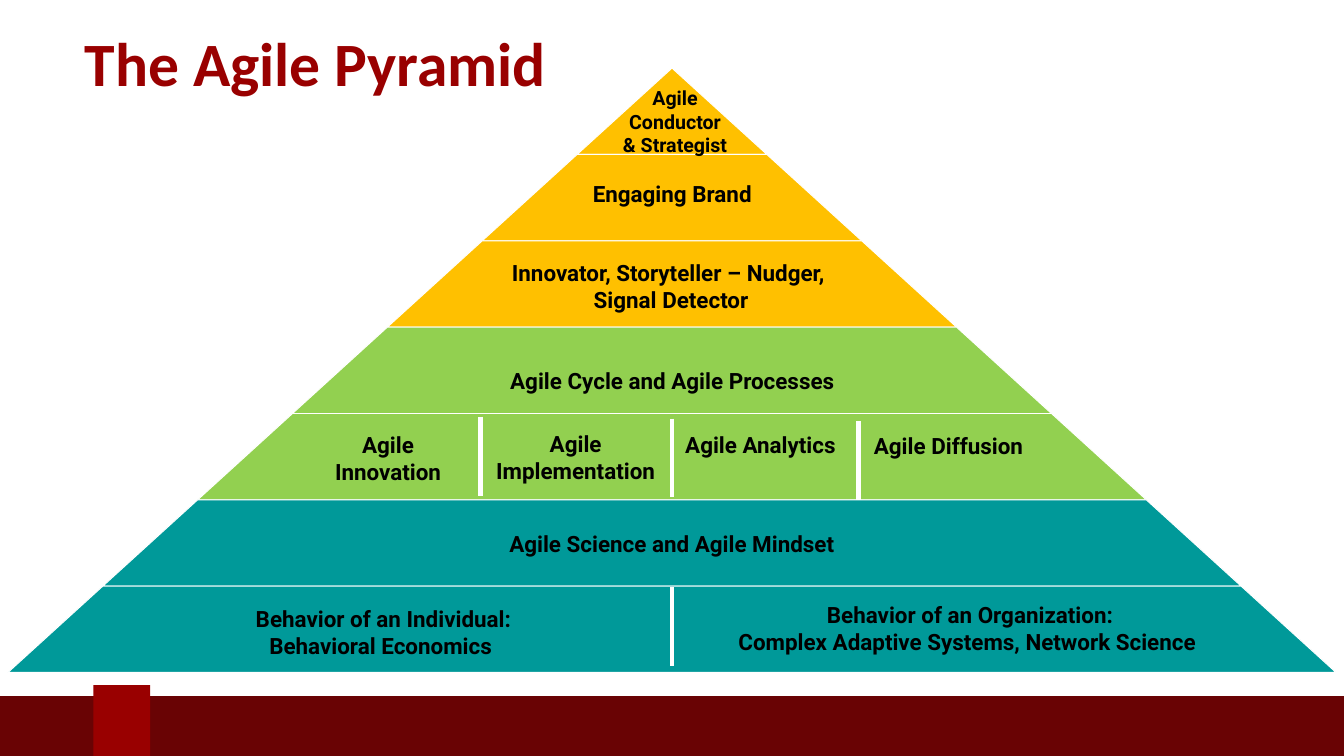
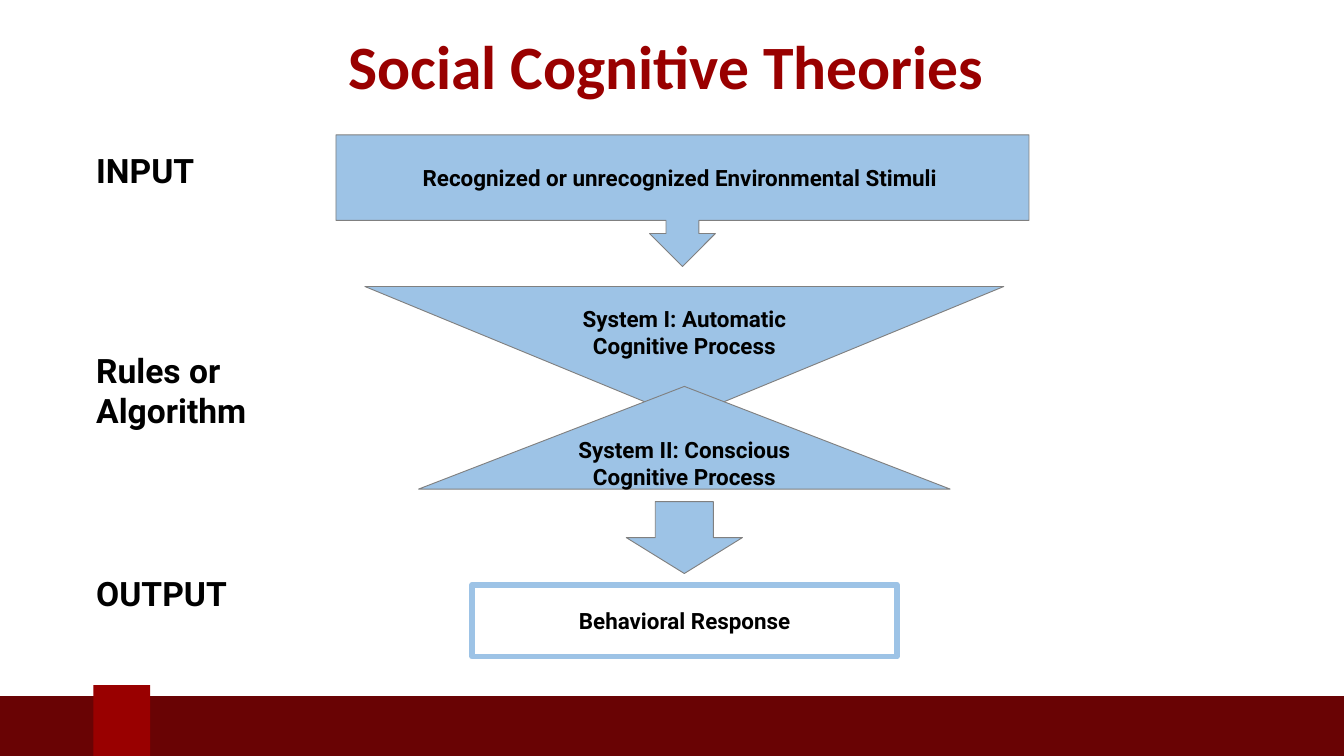
"""Build two slides: the Agile Pyramid and Social Cognitive Theories."""
from lxml import etree
from pptx import Presentation
from pptx.dml.color import RGBColor
from pptx.enum.shapes import MSO_CONNECTOR, MSO_SHAPE
from pptx.enum.text import MSO_ANCHOR, MSO_AUTO_SIZE, PP_ALIGN
from pptx.oxml.ns import qn
from pptx.util import Pt

MAROON = RGBColor(0x69, 0x03, 0x04)
RED = RGBColor(0x99, 0x00, 0x00)
GOLD = RGBColor(0xFF, 0xC0, 0x00)
GREEN = RGBColor(0x92, 0xD0, 0x50)
TEAL = RGBColor(0x00, 0x99, 0x99)
SKY = RGBColor(0x9D, 0xC3, 0xE6)
GREY = RGBColor(0x80, 0x80, 0x80)
WHITE = RGBColor(0xFF, 0xFF, 0xFF)
BLACK = RGBColor(0x00, 0x00, 0x00)

TITLE_FONT = {"name": "Calibri", "size": Pt(66), "bold": True}
BODY_FONT = {"name": "Roboto", "bold": True}
LABEL_FRAME = {"word_wrap": True, "auto_size": MSO_AUTO_SIZE.SHAPE_TO_FIT_TEXT}
STAGE_FRAME = {"word_wrap": True, "vertical_anchor": MSO_ANCHOR.MIDDLE,
               "margin_left": Pt(8), "margin_right": Pt(8),
               "margin_top": Pt(4.3), "margin_bottom": Pt(4.3)}
TITLE_FRAME = {"word_wrap": True, "auto_size": MSO_AUTO_SIZE.NONE,
               "vertical_anchor": MSO_ANCHOR.MIDDLE}


def write(frame, text, frame_format, font_format, color, align):
    """Fill a text frame, one paragraph per line of text."""
    for key, value in frame_format.items():
        setattr(frame, key, value)
    frame.text = text
    for paragraph in frame.paragraphs:
        paragraph.alignment = align
        for key, value in font_format.items():
            setattr(paragraph.font, key, value)
        paragraph.font.color.rgb = color


def add_block(shapes, preset, box, fill, line=None, weight=1):
    """Add a flat preset shape; a missing fill or line is left clear."""
    block = shapes.add_shape(preset, *map(Pt, box))
    block.shadow.inherit = False
    for part, color in ((block.fill, fill), (block.line.fill, line)):
        if color is None:
            part.background()
        else:
            part.solid()
            part.fore_color.rgb = color
    if line is not None:
        block.line.width = Pt(weight)
    return block


deck = Presentation()
deck.slide_width, deck.slide_height = Pt(1440), Pt(810)
title_only = deck.slide_layouts[5]
pyramid_slide = deck.slides.add_slide(title_only)
theory_slide = deck.slides.add_slide(title_only)

for box, color in (((-5, 746, 1454, 72), MAROON), ((100, 734, 61, 84), RED)):
    band = add_block(pyramid_slide.shapes, MSO_SHAPE.RECTANGLE, box, color)
    title_only.shapes.element.append(band.element)

for slide, heading, top, align in (
    (pyramid_slide, "The Agile Pyramid", 16.5, PP_ALIGN.LEFT),
    (theory_slide, "Social Cognitive Theories", 19.5, PP_ALIGN.CENTER),
):
    title = slide.shapes.title
    title.left, title.top, title.width, title.height = map(Pt, (83.5, top, 1261, 110))
    write(title.text_frame, heading, TITLE_FRAME, TITLE_FONT, RED, align)
    title.text_frame.paragraphs[0].line_spacing = 0.9

TIER_HEIGHT, TIER_STEP = 92.5, 203.26
pyramid = pyramid_slide.shapes.add_group_shape()
for level, color in enumerate((GOLD, GOLD, GOLD, GREEN, GREEN, TEAL, TEAL)):
    width = TIER_STEP * (level + 1)
    box = (720 - width / 2, 73 + TIER_HEIGHT * level, width, TIER_HEIGHT)
    tier = add_block(pyramid.shapes, MSO_SHAPE.TRAPEZOID, box, color, WHITE)
    tier.adjustments[0] = TIER_STEP / 2 / TIER_HEIGHT

for x, top in ((515, 446.5), (720, 448.5), (919.5, 451), (720, 629)):
    divider = pyramid_slide.shapes.add_connector(
        MSO_CONNECTOR.STRAIGHT, Pt(x), Pt(top), Pt(x), Pt(top + 84.5))
    divider.line.color.rgb = WHITE
    divider.line.width = Pt(5)
    etree.SubElement(divider.element.spPr, qn("a:effectLst"))

CENTER, LEFT = PP_ALIGN.CENTER, PP_ALIGN.LEFT
for slide, box, size, align, text in (
    (pyramid_slide, (631.5, 88.5, 183.5, 83.5), 21, CENTER, "Agile\nConductor\n& Strategist"),
    (pyramid_slide, (617, 189.5, 206.5, 36), 24, CENTER, "Engaging Brand"),
    (pyramid_slide, (416, 274.5, 606, 65.5), 24, CENTER,
     "Innovator, Storyteller – Nudger, \nSignal Detector"),
    (pyramid_slide, (411, 389.5, 618.5, 36), 24, CENTER, "Agile Cycle and Agile Processes"),
    (pyramid_slide, (324, 458.5, 183.5, 65.5), 24, CENTER, "Agile Innovation"),
    (pyramid_slide, (513.5, 457, 206.5, 65.5), 24, CENTER, "Agile Implementation"),
    (pyramid_slide, (723, 458.5, 183.5, 36), 24, CENTER, "Agile Analytics"),
    (pyramid_slide, (924.5, 459, 183.5, 36), 24, CENTER, "Agile Diffusion"),
    (pyramid_slide, (422.5, 564.5, 594.5, 36), 24, CENTER, "Agile Science and Agile Mindset"),
    (pyramid_slide, (216, 644.5, 389.5, 65.5), 24, CENTER,
     "Behavior of an Individual:\nBehavioral Economics "),
    (pyramid_slide, (759.5, 641, 559.5, 65.5), 24, CENTER,
     "Behavior of an Organization:\nComplex Adaptive Systems, Network Science "),
    (theory_slide, (96, 157, 193.5, 51), 36, LEFT, "INPUT"),
    (theory_slide, (96, 371, 193.5, 94.5), 36, LEFT, "Rules or\nAlgorithm"),
    (theory_slide, (96, 610.5, 193.5, 51), 36, LEFT, "OUTPUT"),
):
    label = slide.shapes.add_textbox(*map(Pt, box))
    write(label.text_frame, text, LABEL_FRAME, BODY_FONT | {"size": Pt(size)}, BLACK, align)

SYSTEM_ONE_FRAME = STAGE_FRAME | {"vertical_anchor": MSO_ANCHOR.TOP,
                                  "margin_top": Pt(20), "margin_bottom": Pt(0)}
for preset, box, fill, line, weight, frame_format, text in (
    (MSO_SHAPE.DOWN_ARROW_CALLOUT, (360, 144.5, 742.5, 141), SKY, GREY, 1, STAGE_FRAME,
     "Recognized or unrecognized Environmental Stimuli "),
    (MSO_SHAPE.FLOWCHART_MERGE, (391, 307, 684.5, 141), SKY, GREY, 1, SYSTEM_ONE_FRAME,
     "System I: Automatic Cognitive Process"),
    (MSO_SHAPE.ISOSCELES_TRIANGLE, (448.5, 414, 569.5, 110), SKY, GREY, 1, STAGE_FRAME,
     "System II: Conscious Cognitive Process"),
    (MSO_SHAPE.DOWN_ARROW, (671, 537.5, 124.5, 77), SKY, GREY, 1, STAGE_FRAME, ""),
    (MSO_SHAPE.RECTANGLE, (506, 626.5, 455, 77), None, SKY, 6, STAGE_FRAME,
     "Behavioral Response"),
):
    stage = add_block(theory_slide.shapes, preset, box, fill, line, weight)
    if text:
        write(stage.text_frame, text, frame_format, BODY_FONT | {"size": Pt(24)}, BLACK, CENTER)

deck.save("out.pptx")
